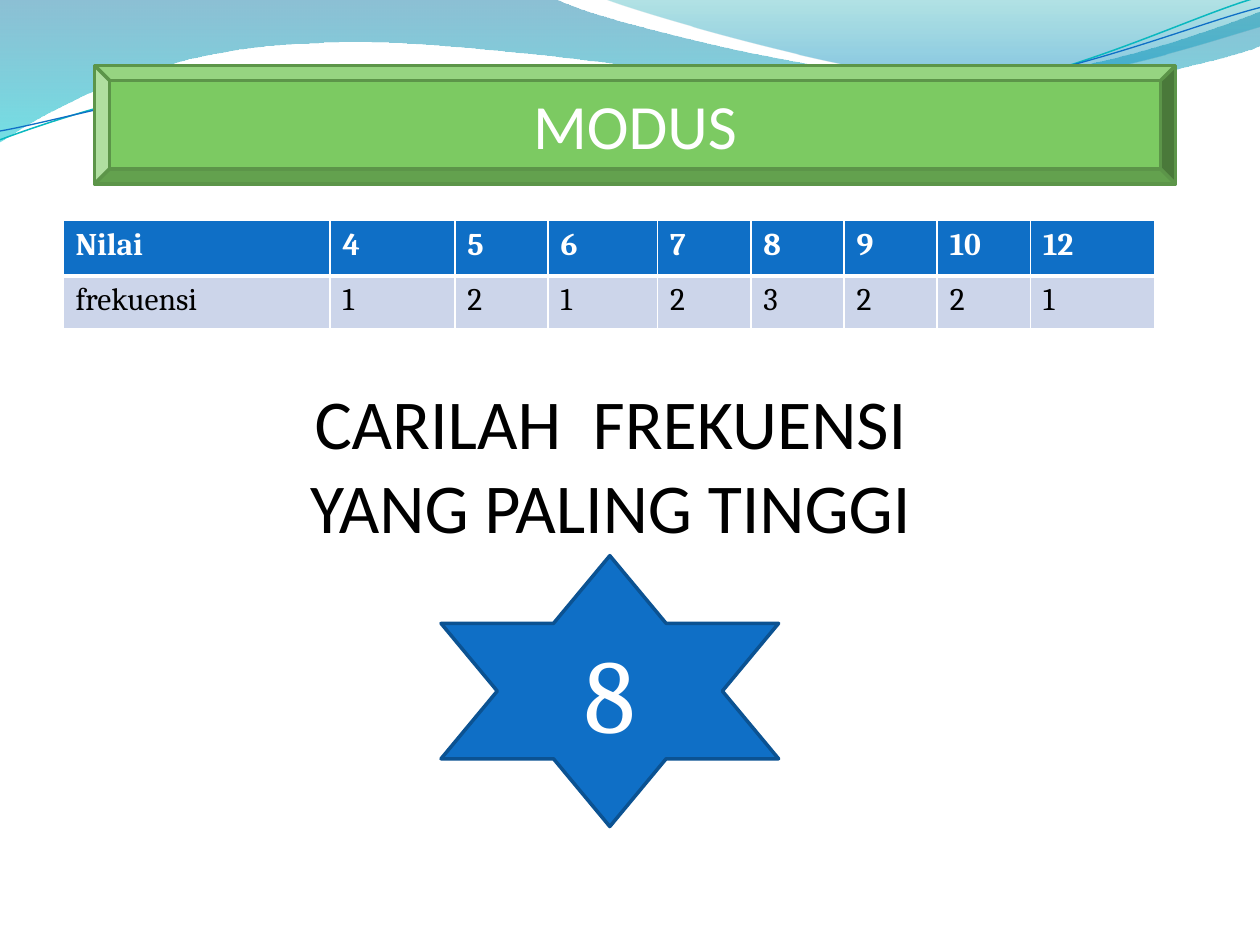
from lxml import etree
from pptx import Presentation
from pptx.dml.color import RGBColor
from pptx.enum.shapes import MSO_SHAPE
from pptx.enum.text import MSO_ANCHOR, PP_ALIGN
from pptx.oxml.ns import qn
from pptx.util import Inches, Pt

BEVEL, STAR = MSO_SHAPE.BEVEL, MSO_SHAPE.STAR_6_POINT
CENTER, LEFT = PP_ALIGN.CENTER, PP_ALIGN.LEFT
MIDDLE, TOP = MSO_ANCHOR.MIDDLE, MSO_ANCHOR.TOP
BLANK = 6
BLUE, GREEN, WHITE, BLACK = "0F6FC6", "7CCA62", "FFFFFF", "000000"

rgb = RGBColor.from_string


def write(frame, text, size, color, font="Calibri", bold=False, align=CENTER, anchor=MIDDLE):
    frame.word_wrap = True
    frame.vertical_anchor = anchor
    paragraph = frame.paragraphs[0]
    paragraph.alignment = align
    run = paragraph.add_run()
    run.text = text
    run.font.name, run.font.size, run.font.bold = font, Pt(size), bold
    run.font.color.rgb = rgb(color)


def add_wave(shapes, start, segments, closed):
    """Draw a freeform; two numbers are a line's end, six are a cubic curve."""
    builder = shapes.build_freeform(Inches(start[0]), Inches(start[1]))
    ends = [(Inches(segment[-2]), Inches(segment[-1])) for segment in segments]
    builder.add_line_segments(ends, close=closed)
    wave = builder.convert_to_shape()
    wave.shadow.inherit = False
    lines = list(wave._element.spPr.iter(qn("a:lnTo")))
    for line, segment in zip(lines, segments):
        if len(segment) == 6:
            curve = etree.Element(qn("a:cubicBezTo"))
            for x, y in zip(segment[::2], segment[1::2]):
                etree.SubElement(curve, qn("a:pt"), x=str(Inches(x) - wave.left),
                                 y=str(Inches(y) - wave.top))
            line.getparent().replace(line, curve)
    return wave


prs = Presentation()
prs.slide_width, prs.slide_height = Inches(10), Inches(7.5)
slide = prs.slides.add_slide(prs.slide_layouts[BLANK])
shapes = slide.shapes

# Header waves: start, segments, gradient stops (position, colour, opacity)
bands = [
    ((0, 0), [(4.4, -0.01), (4.76, 0.17, 6.64, 0.63, 7.58, 0.63),
              (8.53, 0.63, 9.58, 0.26, 10, 0.09), (10.01, 0.36),
              (9.83, 0.44, 8.7, 0.76, 7.46, 0.75), (6.22, 0.75, 3.82, 0.28, 2.57, 0.34),
              (1.29, 0.36, 0.46, 0.83, -0.01, 1.13)],
     [(0, "0074A1", 45), (1, "00C6CF", 55)]),
    ((4.79, -0.01), [(5.09, 0.11, 6.82, 0.62, 7.69, 0.65),
                     (8.56, 0.69, 9.61, 0.32, 10, 0.21), (10, 0)],
     [(0, "00A1A9", 30), (0.8, "008BBF", 45)]),
]
for start, segments, gradient in bands:
    band = add_wave(shapes, start, segments, closed=True)
    band.line.fill.background()
    band.fill.gradient()
    band.fill.gradient_angle = 270
    for stop, (position, color, _) in zip(band.fill.gradient_stops, gradient):
        stop.position = position
        stop.color.rgb = rgb(color)
    stop_colors = band._element.spPr.iter(qn("a:srgbClr"))
    for stop_color, (_, _, opacity) in zip(stop_colors, gradient):
        etree.SubElement(stop_color, qn("a:alpha"), val=str(opacity * 1000))

strands = [
    ((0, 1.11), [(0.48, 0.93, 1.58, 0.57, 2.77, 0.52), (3.95, 0.47, 5.93, 0.89, 7.13, 0.8),
                 (8.33, 0.71, 9.38, 0.15, 9.98, -0.02)], "0AB8BF", 0.85),
    ((0, 1.04), [(0.47, 0.96, 1.64, 0.61, 2.83, 0.56), (4.03, 0.51, 5.97, 0.84, 7.17, 0.75),
                 (8.36, 0.67, 9.41, 0.21, 10, 0.06)], BLUE, 0.75),
]
for start, segments, color, width in strands:
    strand = add_wave(shapes, start, segments, closed=False)
    strand.fill.background()
    strand.line.color.rgb = rgb(color)
    strand.line.width = Pt(width)

# Frequency table
rows = [["Nilai", "4", "5", "6", "7", "8", "9", "10", "12"],
        ["frekuensi", "1", "2", "1", "2", "3", "2", "2", "1"]]
column_widths = [2.12, 0.99, 0.74, 0.87, 0.74, 0.74, 0.74, 0.74, 0.99]
row_heights = [0.44, 0.42]
row_styles = [  # fill, text colour, bold, border widths
    (BLUE, WHITE, True, {"L": 1, "R": 1, "T": 1, "B": 3}),
    ("CCD5EA", BLACK, False, {"L": 1, "R": 1, "T": 3, "B": 1}),
]
table = shapes.add_table(len(rows), len(column_widths), Inches(0.5), Inches(1.75),
                         Inches(sum(column_widths)), Inches(sum(row_heights))).table
for column, width in zip(table.columns, column_widths):
    column.width = Inches(width)
for row, height, values, style in zip(table.rows, row_heights, rows, row_styles):
    row.height = Inches(height)
    fill, color, bold, borders = style
    for cell, value in zip(row.cells, values):
        write(cell.text_frame, value, 18, color, "Cambria", bold, LEFT, TOP)
        properties = cell._tc.get_or_add_tcPr()
        for side, width in borders.items():
            border = etree.SubElement(properties, qn("a:ln" + side), w=str(Pt(width)))
            border_fill = etree.SubElement(border, qn("a:solidFill"))
            etree.SubElement(border_fill, qn("a:srgbClr"), val=WHITE)
        cell.fill.solid()
        cell.fill.fore_color.rgb = rgb(fill)

# Heading plate and answer star
for preset, box, fill, outline, text, size, font in [
    (BEVEL, (0.75, 0.52, 8.58, 0.94), GREEN, "5C9549", "MODUS", 36, "Calibri"),
    (STAR, (3.5, 4.41, 2.68, 2.15), BLUE, "0B5292", "8", 60, "Cambria"),
]:
    plate = shapes.add_shape(preset, *map(Inches, box))
    plate.shadow.inherit = False
    plate.fill.solid()
    plate.fill.fore_color.rgb = rgb(fill)
    plate.line.color.rgb = rgb(outline)
    plate.line.width = Pt(2)
    write(plate.text_frame, text, size, WHITE, font)

instruction = shapes.add_textbox(Inches(1.93), Inches(2.96), Inches(5.83), Inches(1.45))
write(instruction.text_frame, "CARILAH  FREKUENSI YANG PALING TINGGI", 40, BLACK, anchor=TOP)

prs.save("out.pptx")
